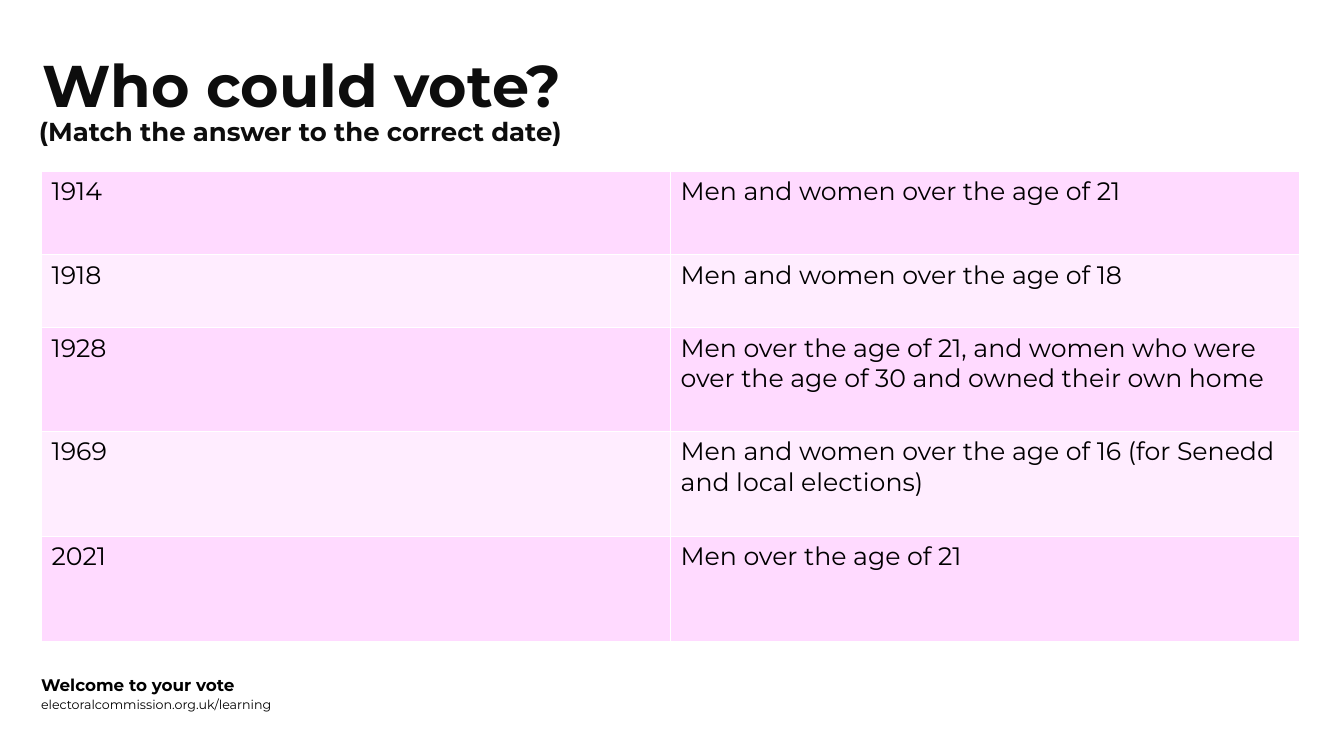
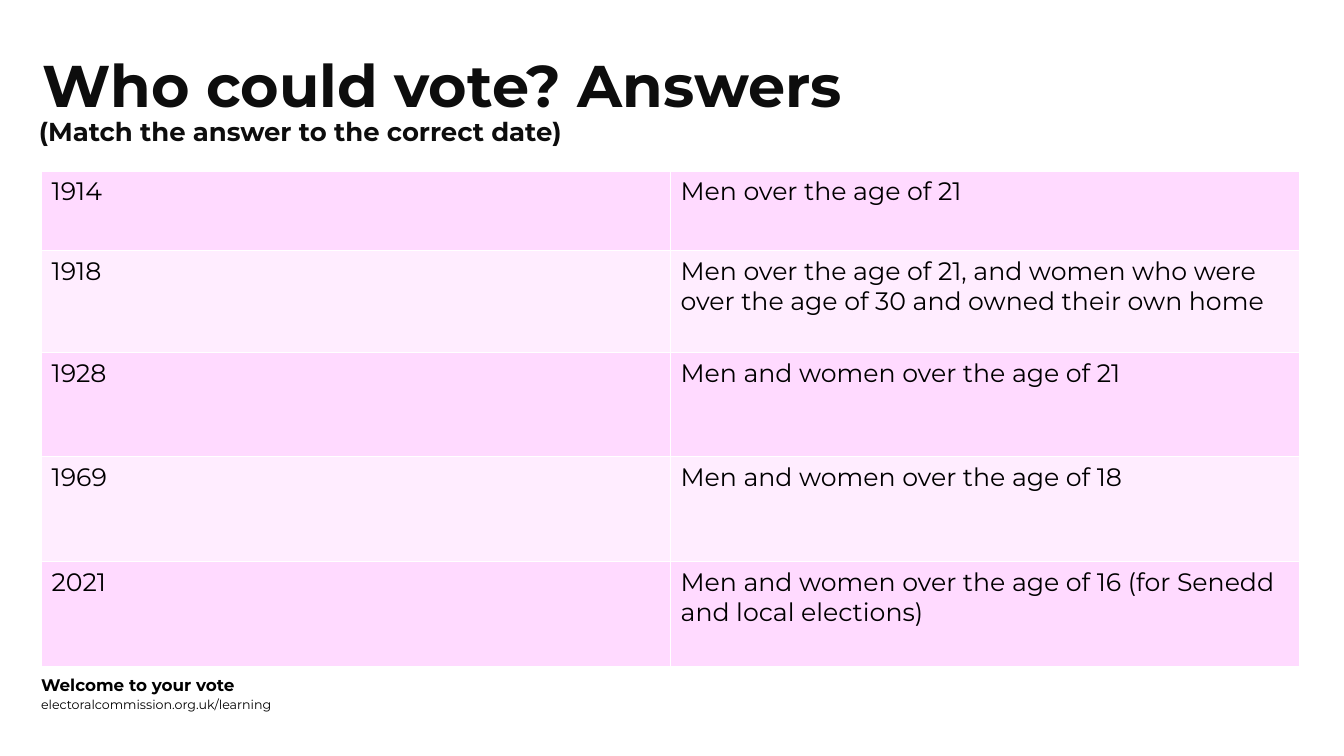
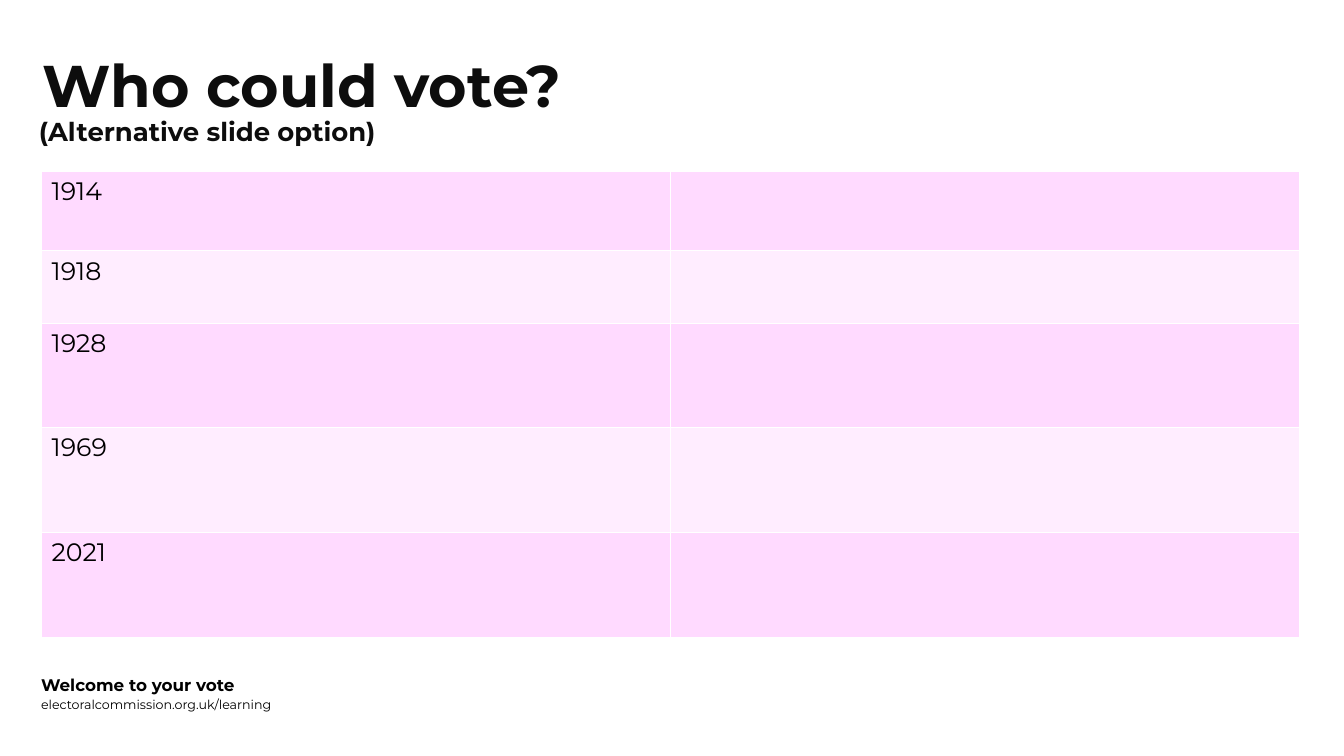
from lxml.etree import SubElement
from pptx import Presentation
from pptx.dml.color import RGBColor
from pptx.enum.text import MSO_ANCHOR
from pptx.oxml.ns import qn
from pptx.util import Pt

FONT = "Montserrat"
BLACK = RGBColor(0x00, 0x00, 0x00)
INK = RGBColor(0x0D, 0x0D, 0x0D)
WHITE = RGBColor(0xFF, 0xFF, 0xFF)
BANDS = RGBColor(0xFF, 0xDA, 0xFF), RGBColor(0xFF, 0xED, 0xFF)

YEARS = ["1914", "1918", "1928", "1969", "2021"]
MEN_21 = "Men over the age of 21"
MEN_21_WOMEN_30 = "Men over the age of 21, and women who were over the age of 30 and owned their own home"
ALL_21 = "Men and women over the age of 21"
ALL_18 = "Men and women over the age of 18"
ALL_16 = "Men and women over the age of 16 (for Senedd and local elections)"

# Title, subtitle, answers, heights of the first two rows
SLIDES = [
    ("Who could vote?", "(Match the answer to the correct date)",
     [ALL_21, ALL_18, MEN_21_WOMEN_30, ALL_16, MEN_21], [59.5, 52]),
    ("Who could vote? Answers", "(Match the answer to the correct date)",
     [MEN_21, MEN_21_WOMEN_30, ALL_21, ALL_18, ALL_16], [56.5, 73]),
    ("Who could vote?", "(Alternative slide option)",
     [""] * len(YEARS), [56.5, 52]),
]
LOWER_ROWS = [74.25, 75, 75]
FOOTER = [("Welcome to your vote", 474.5, 12, True),
          ("electoralcommission.org.uk/learning", 489, 9, False)]

TABLE_LEFT, TABLE_TOP, COLUMN_WIDTH = 29.75, 122.5, 449.25


def style(paragraph, size, color, bold=False):
    for item in [paragraph, *paragraph.runs]:
        item.font.name = FONT
        item.font.size = Pt(size)
        item.font.bold = bold
        item.font.color.rgb = color


def add_text(page, text, place, size, color, bold, spacing=1.0, anchor=MSO_ANCHOR.TOP):
    frame = page.shapes.add_textbox(*map(Pt, place)).text_frame
    frame.word_wrap = True
    frame.vertical_anchor = anchor
    frame.text = text
    frame.paragraphs[0].line_spacing = spacing
    style(frame.paragraphs[0], size, color, bold)


def add_borders(cell):
    properties = cell._tc.get_or_add_tcPr()
    for side in ("a:lnL", "a:lnR", "a:lnT", "a:lnB"):
        line = SubElement(properties, qn(side), w=str(Pt(1)))
        fill = SubElement(line, qn("a:solidFill"))
        SubElement(fill, qn("a:srgbClr"), val=str(WHITE))


def add_answer_table(page, answers, heights):
    frame = page.shapes.add_table(
        len(YEARS), 2, Pt(TABLE_LEFT), Pt(TABLE_TOP), Pt(2 * COLUMN_WIDTH), Pt(sum(heights)))
    table = frame.table
    table.first_row = table.horz_banding = False
    for column in table.columns:
        column.width = Pt(COLUMN_WIDTH)
    for index, (row, height, texts) in enumerate(zip(table.rows, heights, zip(YEARS, answers))):
        row.height = Pt(height)
        for cell, text in zip(row.cells, texts):
            cell.text = text
            style(cell.text_frame.paragraphs[0], 18, BLACK)
            add_borders(cell)
            cell.fill.solid()
            cell.fill.fore_color.rgb = BANDS[index % 2]


def add_page(deck, title, subtitle):
    page = deck.slides.add_slide(deck.slide_layouts[6])
    add_text(page, title, (23, 36.75, 790, 54), 42, INK, True, 0.9)
    add_text(page, subtitle, (20.75, 85, 509, 25), 18.5, INK, True, 0.7)
    for text, top, size, bold in FOOTER:
        add_text(page, text, (22.25, top, 551, 29), size, BLACK, bold, anchor=MSO_ANCHOR.MIDDLE)
    return page


def main():
    deck = Presentation()
    deck.slide_width, deck.slide_height = Pt(960), Pt(540)
    for title, subtitle, answers, upper_rows in SLIDES:
        page = add_page(deck, title, subtitle)
        add_answer_table(page, answers, upper_rows + LOWER_ROWS)
    deck.save("out.pptx")


if __name__ == "__main__":
    main()
